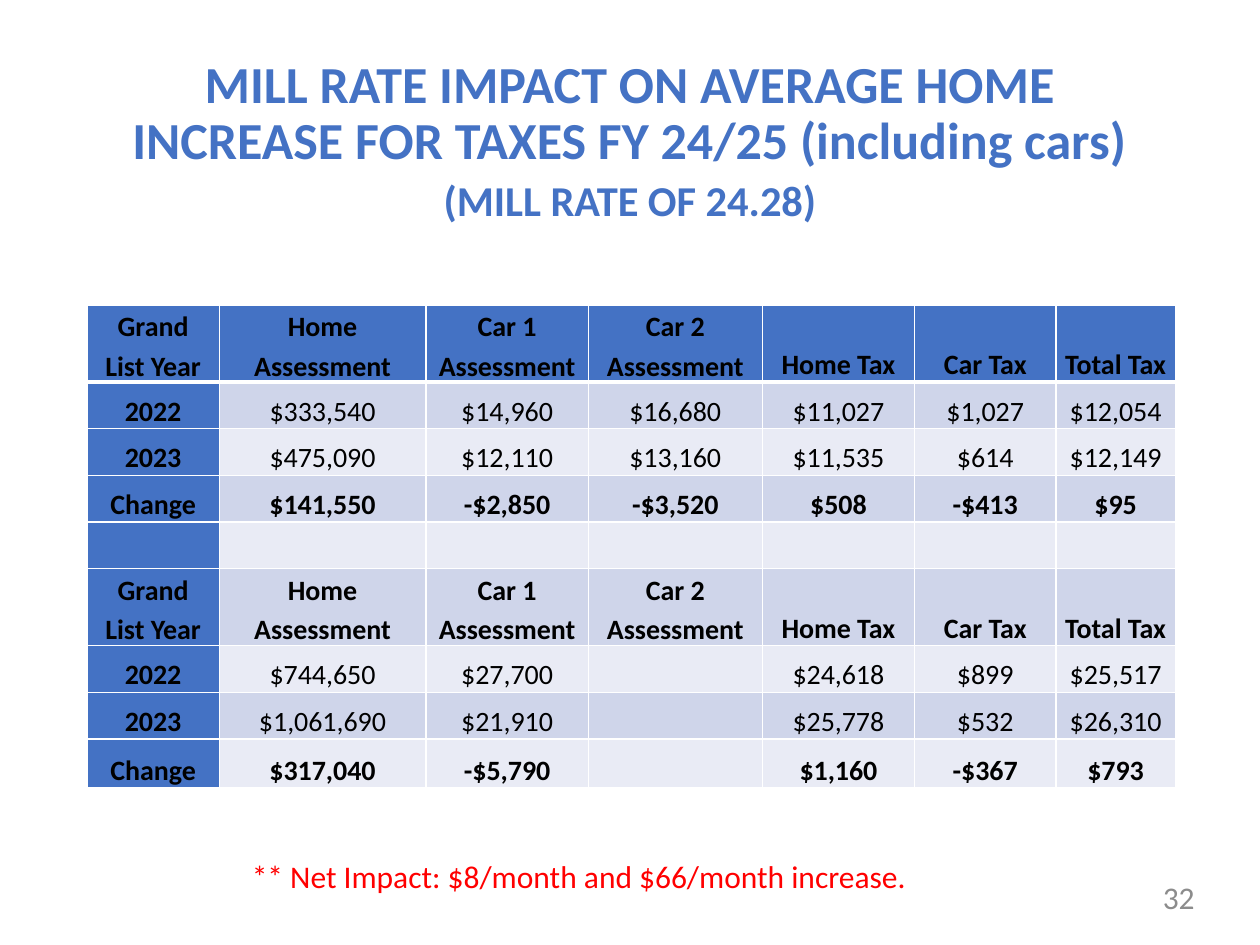
"""Build the slide on mill rate impact for the average home."""
import lxml.etree
import pptx
import pptx.dml.color
import pptx.enum.text
import pptx.oxml.ns
import pptx.util

PP_ALIGN = pptx.enum.text.PP_ALIGN
ANCHOR = pptx.enum.text.MSO_ANCHOR

deck = pptx.Presentation()
deck.slide_width = pptx.util.Inches(10)
deck.slide_height = pptx.util.Inches(7.5)
slide = deck.slides.add_slide(deck.slide_layouts[6])
unit = deck.slide_width // 1000


def color(value):
    return pptx.dml.color.RGBColor.from_string(value)


def write(paragraph, text, size, ink, bold=False, align=PP_ALIGN.CENTER):
    paragraph.alignment = align
    run = paragraph.add_run()
    run.text = text
    run.font.name = "Calibri"
    run.font.size = pptx.util.Pt(size)
    run.font.bold = bold
    run.font.color.rgb = color(ink)


heading = slide.shapes.add_textbox(69 * unit, 40 * unit, 862 * unit, 145 * unit).text_frame
heading.word_wrap = True
heading.vertical_anchor = ANCHOR.MIDDLE
topic = heading.paragraphs[0]
rate = heading.add_paragraph()
write(topic, "MILL RATE IMPACT ON AVERAGE HOME INCREASE FOR TAXES FY 24/25 (including cars)",
      29.7, "4472C4", True)
write(rate, "(MILL RATE OF 24.28)", 24.3, "4472C4", True)
topic.line_spacing = rate.line_spacing = 0.9
rate.space_before = pptx.util.Pt(5)

page_number = slide.shapes.add_textbox(733 * unit, 692 * unit, 225 * unit, 40 * unit).text_frame
page_number.word_wrap = True
page_number.vertical_anchor = ANCHOR.MIDDLE
write(page_number.paragraphs[0], "32", 18, "8C8C8C", align=PP_ALIGN.RIGHT)

labels = ["Grand List Year", "Home Assessment", "Car 1 Assessment", "Car 2 Assessment",
          "Home Tax", "Car Tax", "Total Tax"]
tax_rows = [
    labels,
    ["2022", "$333,540", "$14,960", "$16,680", "$11,027", "$1,027", "$12,054"],
    ["2023", "$475,090", "$12,110", "$13,160", "$11,535", "$614", "$12,149"],
    ["Change", "$141,550", "-$2,850", "-$3,520", "$508", "-$413", "$95"],
    [""] * len(labels),
    labels,
    ["2022", "$744,650", "$27,700", "", "$24,618", "$899", "$25,517"],
    ["2023", "$1,061,690", "$21,910", "", "$25,778", "$532", "$26,310"],
    ["Change", "$317,040", "-$5,790", "", "$1,160", "-$367", "$793"],
]
widths = [105, 164, 129, 138, 121, 112, 95]
heights = [59, 37, 37, 37, 37, 59, 37, 37, 39]
taxes = slide.shapes.add_table(len(heights), len(widths), 69 * unit, 242 * unit,
                               sum(widths) * unit, sum(heights) * unit).table
taxes.first_col = True
for column, width in zip(taxes.columns, widths):
    column.width = width * unit
for row, height in zip(taxes.rows, heights):
    row.height = height * unit

for r, values in enumerate(tax_rows):
    for c, value in enumerate(values):
        cell = taxes.cell(r, c)
        cell.margin_left = cell.margin_right = 7 * unit
        cell.margin_top = cell.margin_bottom = 0
        cell.vertical_anchor = ANCHOR.BOTTOM
        properties = cell._tc.get_or_add_tcPr()
        for side in "LRTB":
            thick = (r, side) in [(0, "B"), (1, "T")]
            border = lxml.etree.SubElement(properties, pptx.oxml.ns.qn("a:ln" + side),
                                           w=str(pptx.util.Pt(3 if thick else 1)))
            stroke = lxml.etree.SubElement(border, pptx.oxml.ns.qn("a:solidFill"))
            lxml.etree.SubElement(stroke, pptx.oxml.ns.qn("a:srgbClr"), val="FFFFFF")
        cell.fill.solid()
        band = "CFD5EA" if r % 2 else "E9EBF5"
        cell.fill.fore_color.rgb = color("4472C4" if r == 0 or c == 0 else band)
        if value:
            entry = cell.text_frame.paragraphs[0]
            entry.line_spacing = 1.15
            emphasis = c == 0 or values is labels or values[0] == "Change"
            write(entry, value, 16, "000000", emphasis)

net_impact = slide.shapes.add_textbox(69 * unit, 675 * unit, 781 * unit, 40 * unit).text_frame
net_impact.word_wrap = True
write(net_impact.paragraphs[0], "** Net Impact: $8/month and $66/month increase.", 18, "FF0000")

deck.save("out.pptx")
